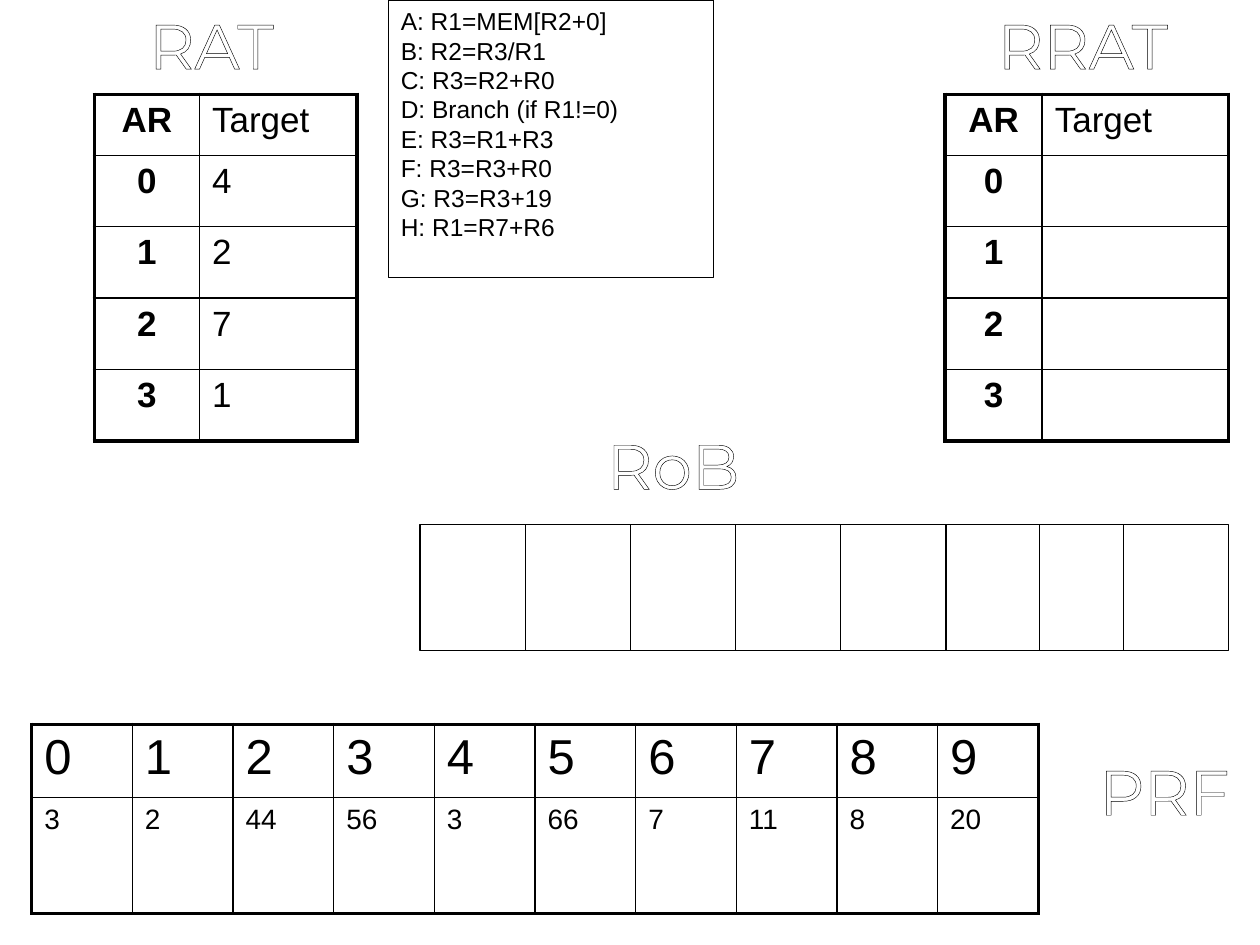
"""Build a register renaming worksheet: RAT, RRAT, RoB and PRF."""
from lxml.etree import SubElement as Sub
from pptx import Presentation
from pptx.dml.color import RGBColor
from pptx.enum.shapes import MSO_CONNECTOR as Link, MSO_SHAPE as Form
from pptx.enum.text import MSO_ANCHOR as Anchor, PP_ALIGN as Align
from pptx.oxml.ns import qn
from pptx.util import Cm, Pt

hue = RGBColor.from_string
INK = "000000"


def write(frame, text, size, font="Arial", color=INK, bold=False,
          align=Align.LEFT, lead=None, edge=None):
    frame.text = text
    for para in frame.paragraphs:
        para.alignment = align
        para.line_spacing = lead
        for run in para.runs:
            run.font.size = Pt(size)
            run.font.name = font
            run.font.bold = bold
            run.font.color.rgb = hue(color)
            if edge:
                props = run._r.get_or_add_rPr()
                line = props.makeelement(qn("a:ln"), w=str(Pt(0.75)))
                Sub(Sub(line, qn("a:solidFill")), qn("a:srgbClr"), val=edge)
                props.insert(0, line)


deck = Presentation()
deck.slide_width, deck.slide_height = Cm(25.4), Cm(19.05)
slide = deck.slides.add_slide(deck.slide_layouts[6])
shapes = slide.shapes

code = """A: R1=MEM[R2+0]
B: R2=R3/R1
C: R3=R2+R0
D: Branch (if R1!=0)
E: R3=R1+R3
F: R3=R3+R0
G: R3=R3+19
H: R1=R7+R6"""
panes = [(7.83, 0, 6.56, 5.59, code), (8.47, 10.58, 16.3, 2.54, "")]
for left, top, width, height, text in panes:
    pane = shapes.add_shape(Form.RECTANGLE, Cm(left), Cm(top), Cm(width), Cm(height))
    pane.shadow.inherit = False
    pane.fill.background()
    pane.line.color.rgb = hue(INK)
    pane.line.width = Pt(0.75)
    pane.text_frame.vertical_anchor = Anchor.TOP
    if text:
        write(pane.text_frame, text, 14, lead=Pt(16.8))

for x in [8.47 + 2.12 * i for i in range(1, 6)] + [20.96, 22.65]:
    rule = shapes.add_connector(Link.STRAIGHT, Cm(x), Cm(10.58), Cm(x), Cm(13.12))
    rule.line.color.rgb = hue(INK)
    rule.line.width = Pt(0.75)
    Sub(rule._element.spPr, qn("a:effectLst"))

head = ("AR", "Target")
tall = [1.23] + [1.44] * 4
rrat = [head] + [(str(i), "") for i in range(4)]
rat = [head] + [(str(i), reg) for i, reg in enumerate("4271")]
prf = [[str(i) for i in range(10)], "3 2 44 56 3 66 7 11 8 20".split()]
grids = [
    (19.05, 1.9, [1.96, 3.76], tall, rrat, [20] * 5, True),
    (1.9, 1.9, [2.12, 3.18], tall, rat, [20] * 5, True),
    (0.64, 14.6, [2.03] * 10, [1.48, 2.33], prf, [28, 16], False),
]
for left, top, wide, high, data, sizes, keyed in grids:
    table = shapes.add_table(len(high), len(wide), Cm(left), Cm(top),
                             Cm(sum(wide)), Cm(sum(high))).table
    table.first_row = table.horz_banding = False
    for col, width in zip(table.columns, wide):
        col.width = Cm(width)
    for r, height in enumerate(high):
        table.rows[r].height = Cm(height)
        for c, text in enumerate(data[r]):
            cell = table.cell(r, c)
            key = keyed and c == 0
            write(cell.text_frame, text, sizes[r], bold=key,
                  align=Align.CENTER if key else Align.LEFT)
            props = cell._tc.get_or_add_tcPr()
            outer = {"L": c == 0, "R": c == len(wide) - 1,
                     "T": r == 0, "B": r == len(high) - 1}
            for side, thick in outer.items():
                line = Sub(props, qn("a:ln" + side), w=str(Pt(2.25 if thick else 1)))
                Sub(Sub(line, qn("a:solidFill")), qn("a:srgbClr"), val=INK)
            cell.fill.background()

labels = [("RRAT", 19.9, 0), ("RAT", 2.33, 0), ("RoB", 11.64, 8.47), ("PRF", 21.54, 15.04)]
for text, left, top in labels:
    label = shapes.add_textbox(Cm(left), Cm(top), Cm(3.86), Cm(1.8))
    frame = label.text_frame
    frame.word_wrap = False
    frame.margin_left = frame.margin_right = 0
    write(frame, text, 36, font="Montserrat", color="FFFFFF",
          align=Align.CENTER, edge=INK)

deck.save("out.pptx")
